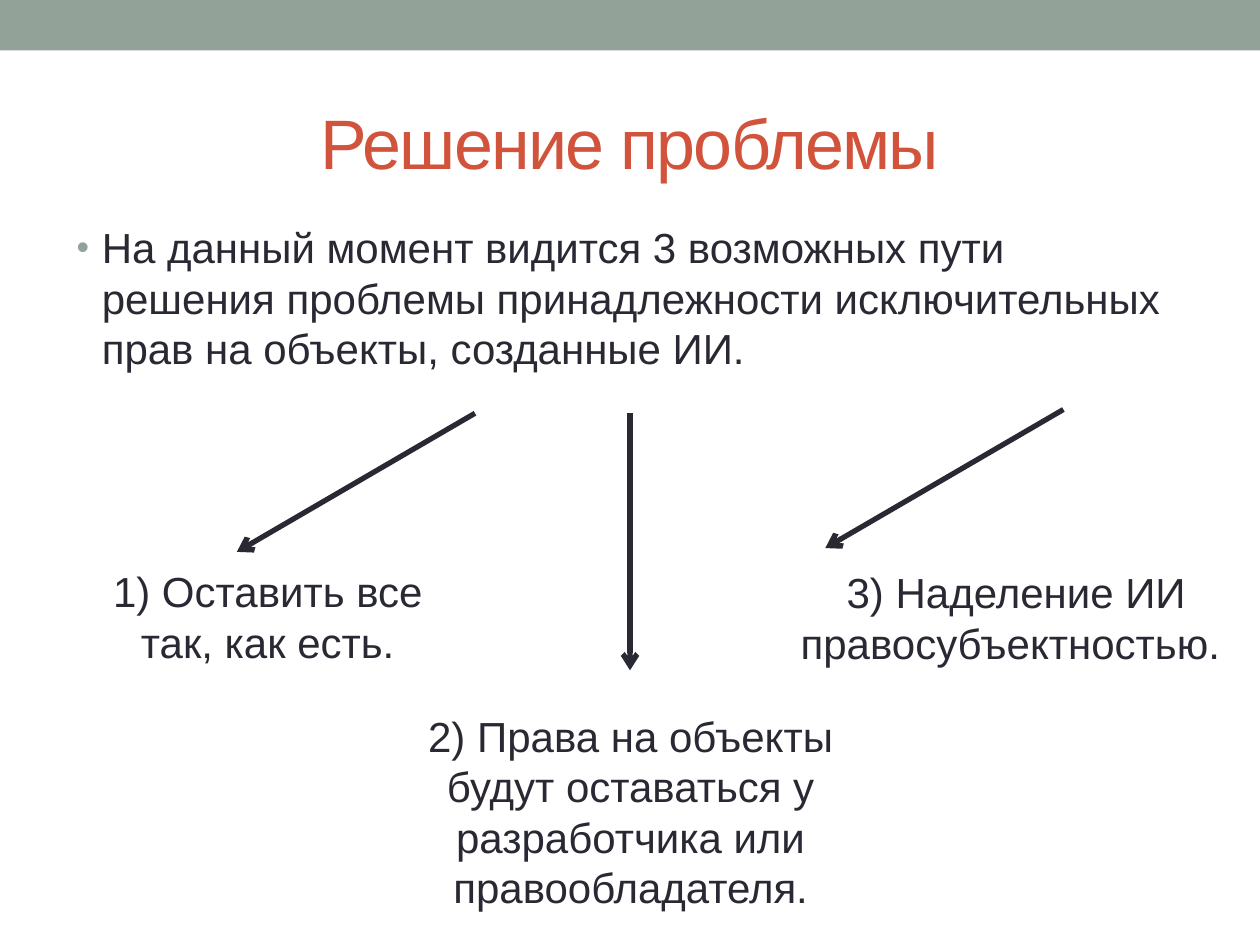
from dataclasses import dataclass

from lxml import etree
from pptx import Presentation
from pptx.dml.color import RGBColor
from pptx.enum.shapes import MSO_CONNECTOR, MSO_SHAPE
from pptx.enum.text import MSO_ANCHOR, PP_ALIGN
from pptx.oxml.ns import qn
from pptx.util import Inches, Pt

RECT = MSO_SHAPE.RECTANGLE
STRAIGHT = MSO_CONNECTOR.STRAIGHT
LEFT, CENTER = PP_ALIGN.LEFT, PP_ALIGN.CENTER
TOP, MIDDLE = MSO_ANCHOR.TOP, MSO_ANCHOR.MIDDLE

FONT = "Arial"
SAGE, RED, DARK = "93A299", "D2533C", "292934"


@dataclass
class Option:
    """One way out: its text box and the arrow that leads to it, in inches."""
    text: str
    box: tuple[float, float, float, float]
    start: tuple[float, float]
    end: tuple[float, float]


OPTIONS = [
    Option("1) Оставить все так, как есть.",
           (0.67, 4.44, 2.91, 0.91), (3.77, 3.28), (1.88, 4.38)),
    Option("2) Права на объекты будут оставаться у разработчика или правообладателя.",
           (3.22, 5.59, 3.57, 1.72), (5, 3.28), (5, 5.32)),
    Option("3) Наделение ИИ правосубъектностью. ",
           (6.13, 4.45, 3.87, 0.91), (8.44, 3.25), (6.55, 4.35)),
]


def rgb(color: str) -> RGBColor:
    return RGBColor.from_string(color)


def add_text(slide, text: str, box: tuple, size: float = 24, color: str = DARK,
             align=CENTER, anchor=TOP):
    """Add a wrapped one-paragraph text box and return the paragraph."""
    tf = slide.shapes.add_textbox(*map(Inches, box)).text_frame
    tf.word_wrap = True
    tf.vertical_anchor = anchor
    p = tf.paragraphs[0]
    p.text = text
    p.alignment = align
    p.font.name = FONT
    p.font.size = Pt(size)
    p.font.color.rgb = rgb(color)
    return p


def add_bullet(p, color: str, percent: int, indent: float) -> None:
    pPr = p._p.get_or_add_pPr()
    pPr.set("marL", str(Inches(indent)))
    pPr.set("indent", str(-Inches(indent)))
    bullet = [
        etree.Element(qn("a:buClr")),
        etree.Element(qn("a:buSzPct"), val=str(percent * 1000)),
        etree.Element(qn("a:buFont"), typeface=FONT),
        etree.Element(qn("a:buChar"), char="•"),
    ]
    etree.SubElement(bullet[0], qn("a:srgbClr"), val=color)
    for i, element in enumerate(bullet):
        pPr.insert(i, element)


def add_arrow(slide, start: tuple, end: tuple) -> None:
    line = slide.shapes.add_connector(STRAIGHT, *map(Inches, start + end))
    line.line.color.rgb = rgb(DARK)
    line.line.width = Pt(3)
    etree.SubElement(line.line._get_or_add_ln(), qn("a:tailEnd"), type="arrow")
    etree.SubElement(line._element.spPr, qn("a:effectLst"))


def main() -> None:
    prs = Presentation()
    prs.slide_width, prs.slide_height = Inches(10), Inches(7.5)
    s = prs.slides.add_slide(prs.slide_layouts[6])

    band = s.shapes.add_shape(RECT, 0, 0, prs.slide_width, Inches(0.4))
    band.shadow.inherit = False
    band.fill.solid()
    band.fill.fore_color.rgb = rgb(SAGE)
    band.line.fill.background()

    title = add_text(s, "Решение проблемы", (0.5, 0.58, 9, 1.08), 40, RED, anchor=MIDDLE)
    title.runs[0].font._element.set("spc", "-100")

    intro = add_text(s, "На данный момент видится 3 возможных пути решения проблемы "
                     "принадлежности исключительных прав на объекты, созданные ИИ.",
                     (0.51, 1.71, 9, 5.33), align=LEFT)
    add_bullet(intro, SAGE, 85, 0.2)

    for option in OPTIONS:
        add_arrow(s, option.start, option.end)
    for option in OPTIONS:
        add_text(s, option.text, option.box)

    prs.save("out.pptx")


if __name__ == "__main__":
    main()
